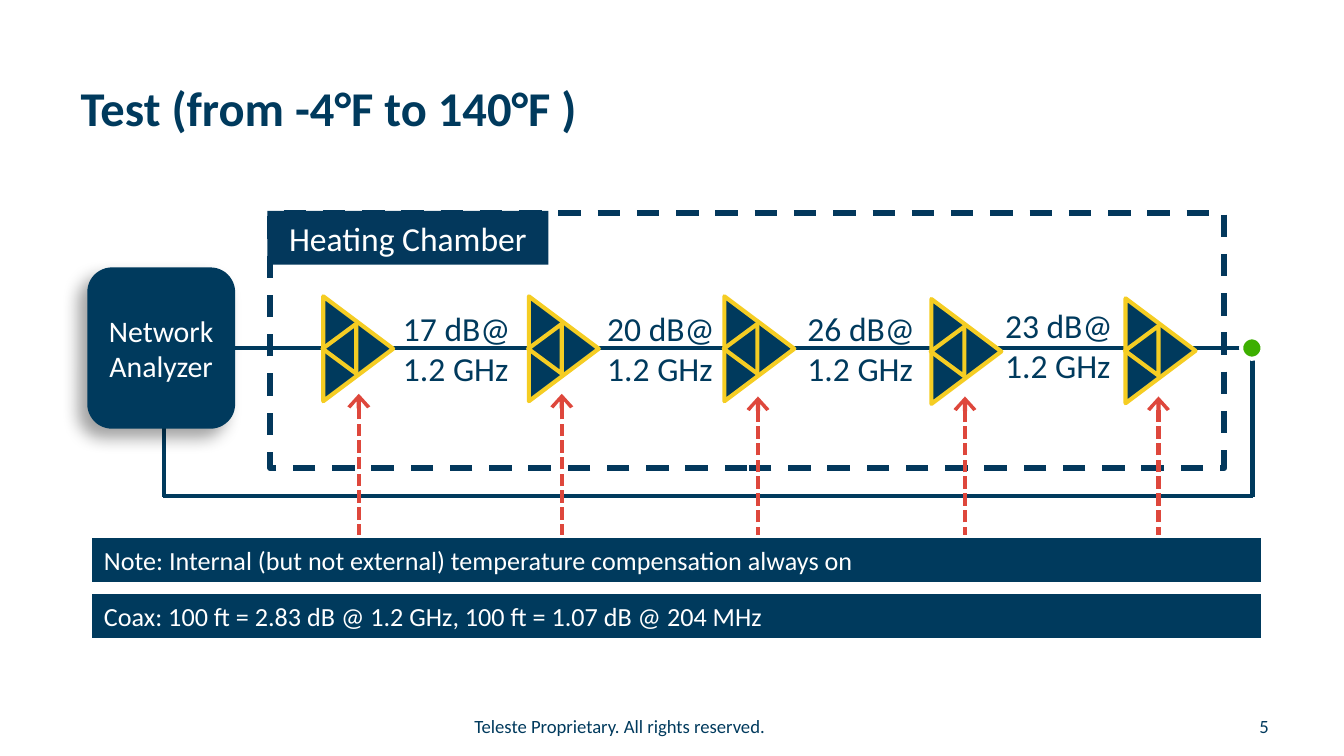
from dataclasses import dataclass
from typing import Optional

from lxml import etree
from pptx import Presentation
from pptx import util as u
from pptx.dml.color import RGBColor
from pptx.enum import dml, shapes, text
from pptx.oxml.ns import qn

NAVY = RGBColor(0x00, 0x3A, 0x5D)
CHAMBER_NAVY = RGBColor(0x03, 0x38, 0x5C)
YELLOW = RGBColor(0xF5, 0xCD, 0x23)
RED = RGBColor(0xDE, 0x47, 0x3C)
GREEN = RGBColor(0x3D, 0xAF, 0x00)
WHITE = RGBColor(0xFF, 0xFF, 0xFF)

FONT = "Calibri"
COLUMNS, ROWS = 100, 56.25
CELL = u.Inches(0.1)
AMPLIFIER = (7.8, 5.2)
AMPLIFIER_CORE = (3.7, 2.5)
CORE_SHIFT = 1.4
ARROW_LENGTH = 13.1
LEFT, CENTER, RIGHT = text.PP_ALIGN.LEFT, text.PP_ALIGN.CENTER, text.PP_ALIGN.RIGHT
SHAPE = shapes.MSO_SHAPE


@dataclass(frozen=True)
class Area:
    column: float
    row: float
    columns: float
    rows: float

    def lengths(self) -> tuple:
        return tuple(cells(n) for n in (self.column, self.row, self.columns, self.rows))


@dataclass(frozen=True)
class Stage:
    column: float
    row: float
    arrow_column: float
    arrow_row: float
    loss: Optional[str] = None
    label_column: float = 0
    label_row: float = 22.4


STAGES = (
    Stage(26.65, 25.95, 26.7, 42.4, "17 dB@", 29),
    Stage(41.95, 25.95, 41.8, 42.4, "20 dB@", 44.2),
    Stage(56.5, 25.95, 56.4, 42.6, "26 dB@", 59.1),
    Stage(71.9, 26.15, 71.8, 42.6, "23 dB@", 73.8, 22.2),
    Stage(86.35, 26.1, 86.2, 42.6),
)


def cells(count: float) -> int:
    return round(count * CELL)


def write(shape, lines, size, color, alignment=LEFT, bold=False):
    frame = shape.text_frame
    frame.word_wrap = True
    frame.text = "\n".join(lines)
    for paragraph in frame.paragraphs:
        paragraph.alignment = alignment
        paragraph.font.name = FONT
        paragraph.font.size = u.Pt(size)
        paragraph.font.bold = bold
        paragraph.font.color.rgb = color


def add_label(slide, area: Area, lines, size, alignment=LEFT):
    write(slide.shapes.add_textbox(*area.lengths()), lines, size, NAVY, alignment)


def add_block(parent, kind, area: Area, fill=None, line=None, width=2.25):
    shape = parent.shapes.add_shape(kind, *area.lengths())
    shape.shadow.inherit = False
    if fill is None:
        shape.fill.background()
    else:
        shape.fill.solid()
        shape.fill.fore_color.rgb = fill
    if line is None:
        shape.line.fill.background()
    else:
        shape.line.color.rgb = line
        shape.line.width = u.Pt(width)
    return shape


def add_line(slide, start, end, color=NAVY):
    connector = slide.shapes.add_connector(
        shapes.MSO_CONNECTOR.STRAIGHT, *(cells(n) for n in (*start, *end)))
    connector.line.color.rgb = color
    connector.line.width = u.Pt(2.25)
    etree.SubElement(connector.element.spPr, qn("a:effectLst"))
    return connector


def add_amplifier(slide, stage: Stage):
    group = slide.shapes.add_group_shape()
    for size, shift, angle in ((AMPLIFIER, 0, 90), (AMPLIFIER_CORE, -CORE_SHIFT, 270)):
        width, height = size
        area = Area(stage.column + shift - width / 2, stage.row - height / 2, width, height)
        triangle = add_block(group, SHAPE.ISOSCELES_TRIANGLE, area, NAVY, YELLOW)
        triangle.rotation = angle


def add_heat_arrow(slide, stage: Stage):
    arrow = add_line(slide, (stage.arrow_column, stage.arrow_row),
                     (stage.arrow_column, stage.arrow_row - ARROW_LENGTH), RED)
    arrow.line.dash_style = dml.MSO_LINE.SQUARE_DOT
    etree.SubElement(arrow.element.spPr.find(qn("a:ln")), qn("a:tailEnd"),
                     type="arrow", w="lg", len="med")


def add_note(slide, row: float, words: str):
    bar = add_block(slide, SHAPE.RECTANGLE, Area(6.75, row, 87.2, 3.5), NAVY, WHITE, 1.5)
    write(bar, [words], 14, WHITE)


def add_soft_shadow(shape):
    effects = shape.element.spPr.find(qn("a:effectLst"))
    shadow = etree.SubElement(effects, qn("a:outerShdw"), blurRad=str(u.Pt(9)),
                              dist=str(u.Pt(7)), dir=str(135 * 60000), rotWithShape="0")
    color = etree.SubElement(shadow, qn("a:srgbClr"), val="000000")
    etree.SubElement(color, qn("a:alpha"), val="36000")


def main():
    presentation = Presentation()
    presentation.slide_width = cells(COLUMNS)
    presentation.slide_height = cells(ROWS)
    slide = presentation.slides.add_slide(presentation.slide_layouts[5])

    title = slide.shapes.title
    title.left, title.top, title.width, title.height = Area(5, 5.3, 91.5, 9.2).lengths()
    write(title, ["Test (from -4°F to 140°F )"], 26, NAVY, bold=True)
    title.text_frame.vertical_anchor = text.MSO_ANCHOR.TOP
    title.text_frame.auto_size = text.MSO_AUTO_SIZE.NONE

    add_label(slide, Area(28.6, 52.7, 35, 2.7),
              ["Teleste Proprietary. All rights reserved."], 10, CENTER)
    add_label(slide, Area(91.1, 52.7, 4.3, 2.7), ["5"], 10, RIGHT)

    signal = add_line(slide, (17.5, 25.9), (92.6, 25.9))
    for stage in STAGES:
        if stage.loss:
            add_label(slide, Area(stage.label_column, stage.label_row, 10.3, 7.1),
                      [stage.loss, "1.2 GHz"], 18)
    add_line(slide, (12.1, 36.9), (93.2, 36.9))
    for stage in STAGES:
        add_amplifier(slide, stage)
    for column in (93.2, 12.2):
        add_line(slide, (column, 26), (column, 37))

    analyzer = add_block(slide, SHAPE.ROUNDED_RECTANGLE, Area(6.5, 19.9, 11, 12), NAVY)
    add_soft_shadow(analyzer)
    write(analyzer, ["Network", "Analyzer"], 16, WHITE, CENTER)
    signal.begin_connect(analyzer, 3)
    add_block(slide, SHAPE.OVAL, Area(92.35, 25.1, 1.6, 1.6), GREEN, WHITE)

    heading = add_block(slide, SHAPE.RECTANGLE, Area(19.9, 15.7, 20.9, 4), CHAMBER_NAVY)
    write(heading, ["Heating Chamber"], 18, WHITE, CENTER)
    chamber = add_block(slide, SHAPE.RECTANGLE, Area(20.1, 15.85, 71, 19),
                        line=CHAMBER_NAVY, width=3)
    chamber.line.dash_style = dml.MSO_LINE.DASH

    add_note(slide, 44.1, "Coax: 100 ft = 2.83 dB @ 1.2 GHz, 100 ft = 1.07 dB @ 204 MHz")
    for stage in STAGES:
        add_heat_arrow(slide, stage)
    add_note(slide, 39.95, "Note: Internal (but not external) temperature compensation always on")

    presentation.save("out.pptx")


if __name__ == "__main__":
    main()
